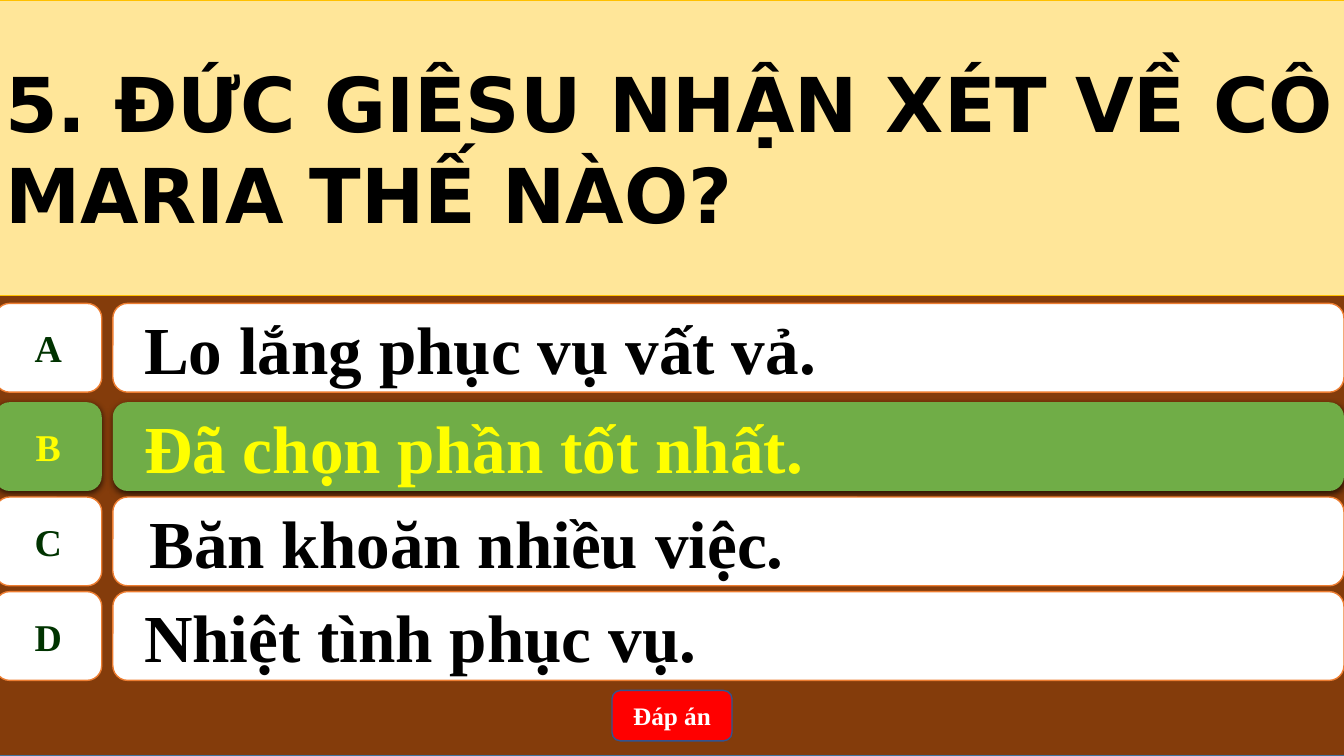
from dataclasses import dataclass

from lxml.etree import SubElement
from pptx import Presentation
from pptx.dml.color import RGBColor
from pptx.enum.shapes import MSO_SHAPE as Form
from pptx.enum.text import MSO_ANCHOR as Anchor, MSO_AUTO_SIZE as Fit, PP_ALIGN as Align
from pptx.oxml.ns import qn
from pptx.util import Pt

QUESTION = "5. ĐỨC GIÊSU NHẬN XÉT VỀ CÔ MARIA THẾ NÀO?"
BUTTON = "Đáp án"
# letter, answer, top, left inset of the answer, is it right
ANSWERS = [
    ("A", "Lo lắng phục vụ vất vả.", 216.7, 19.2, False),
    ("B", "Đã chọn phần tốt nhất.", 287.3, 19.2, True),
    ("C", "Băn khoăn nhiều việc.", 355, 23, False),
    ("D", "Nhiệt tình phục vụ.", 422.6, 19.2, False),
]


@dataclass(frozen=True)
class Theme:
    serif: str = "Times New Roman"
    sans: str = "DejaVu Sans"
    back: str = "843C0B"
    back_edge: str = "43739E"
    band: str = "FFE699"
    band_edge: str = "FFC000"
    card: str = "FFFFFF"
    card_edge: str = "ED7D31"
    right: str = "70AD47"
    right_ink: str = "FFFF00"
    key_ink: str = "003300"
    ink: str = "000000"
    button: str = "FF0000"
    button_edge: str = "325491"
    button_ink: str = "FFFFFF"
    title_size: int = 54
    answer_size: int = 48
    key_size: int = 27
    button_size: int = 18


T = Theme()
WIDE, HIGH = 960, 540
LEFT, SPAN = -3.6, 964
BAND_H = 211
KEY_W, ROW_H = 76.3, 63.4
ANSWER_X = 80.6
BUTTON_W, BUTTON_H, BUTTON_Y = 85.7, 36, 493.2


def rgb(code):
    return RGBColor.from_string(code)


def paint(shape, fill, edge=None, weight=1):
    shape.fill.solid()
    shape.fill.fore_color.rgb = rgb(fill)
    if edge:
        shape.line.color.rgb = rgb(edge)
        shape.line.width = Pt(weight)
    else:
        shape.line.fill.background()
    shape.shadow.inherit = False


def add_box(shapes, form, x, y, w, h, fill, edge=None):
    box = shapes.add_shape(form, Pt(x), Pt(y), Pt(w), Pt(h))
    paint(box, fill, edge)
    return box


def write(shape, text, size, color, font=T.serif, align=Align.CENTER, wrap=True):
    frame = shape.text_frame
    frame.auto_size = Fit.NONE
    frame.word_wrap = wrap
    frame.vertical_anchor = Anchor.MIDDLE
    para = frame.paragraphs[0]
    para.alignment = align
    run = para.add_run()
    run.text = text
    run.font.name = font
    run.font.size = Pt(size)
    run.font.bold = True
    run.font.color.rgb = rgb(color)


def cast_shadow(shape):
    """Put a soft black shadow just below the shape."""
    effects = shape.element.spPr.find(qn("a:effectLst"))
    shade = SubElement(effects, qn("a:outerShdw"), blurRad=str(Pt(4.5)),
                       dist=str(Pt(1.5)), dir="5400000", rotWithShape="0")
    color = SubElement(shade, qn("a:srgbClr"), val=T.ink)
    SubElement(color, qn("a:alpha"), val="63000")


def add_answer(slide, key, text, top, inset, right):
    fill, edge = (T.right, None) if right else (T.card, T.card_edge)
    shapes = slide.shapes.add_group_shape().shapes
    bar = add_box(shapes, Form.ROUNDED_RECTANGLE, ANSWER_X, top,
                  WIDE - ANSWER_X, ROW_H, fill, edge)
    write(bar, text, T.answer_size, T.right_ink if right else T.ink, align=Align.LEFT)
    bar.text_frame.margin_left = Pt(inset)
    tab = add_box(shapes, Form.FLOWCHART_ALTERNATE_PROCESS, LEFT, top,
                  KEY_W, ROW_H, fill, edge)
    write(tab, key, T.key_size, T.right_ink if right else T.key_ink, wrap=False)
    if right:
        cast_shadow(bar)
        cast_shadow(tab)


def add_title(slide):
    title = slide.shapes.title
    title.left, title.top, title.width, title.height = map(Pt, (LEFT, 0, SPAN, BAND_H))
    paint(title, T.band, T.band_edge, 0.5)
    write(title, QUESTION, T.title_size, T.ink, T.sans, Align.JUSTIFY)
    return title


def main():
    deck = Presentation()
    deck.slide_width, deck.slide_height = Pt(WIDE), Pt(HIGH)
    slide = deck.slides.add_slide(deck.slide_layouts[5])
    title = add_title(slide)
    back = add_box(slide.shapes, Form.RECTANGLE, LEFT, 0, SPAN, HIGH, T.back, T.back_edge)
    title.element.addprevious(back.element)
    for answer in ANSWERS:
        add_answer(slide, *answer)
    button = add_box(slide.shapes, Form.ROUNDED_RECTANGLE, (WIDE - BUTTON_W) / 2,
                     BUTTON_Y, BUTTON_W, BUTTON_H, T.button, T.button_edge)
    write(button, BUTTON, T.button_size, T.button_ink)
    deck.save("out.pptx")


if __name__ == "__main__":
    main()
